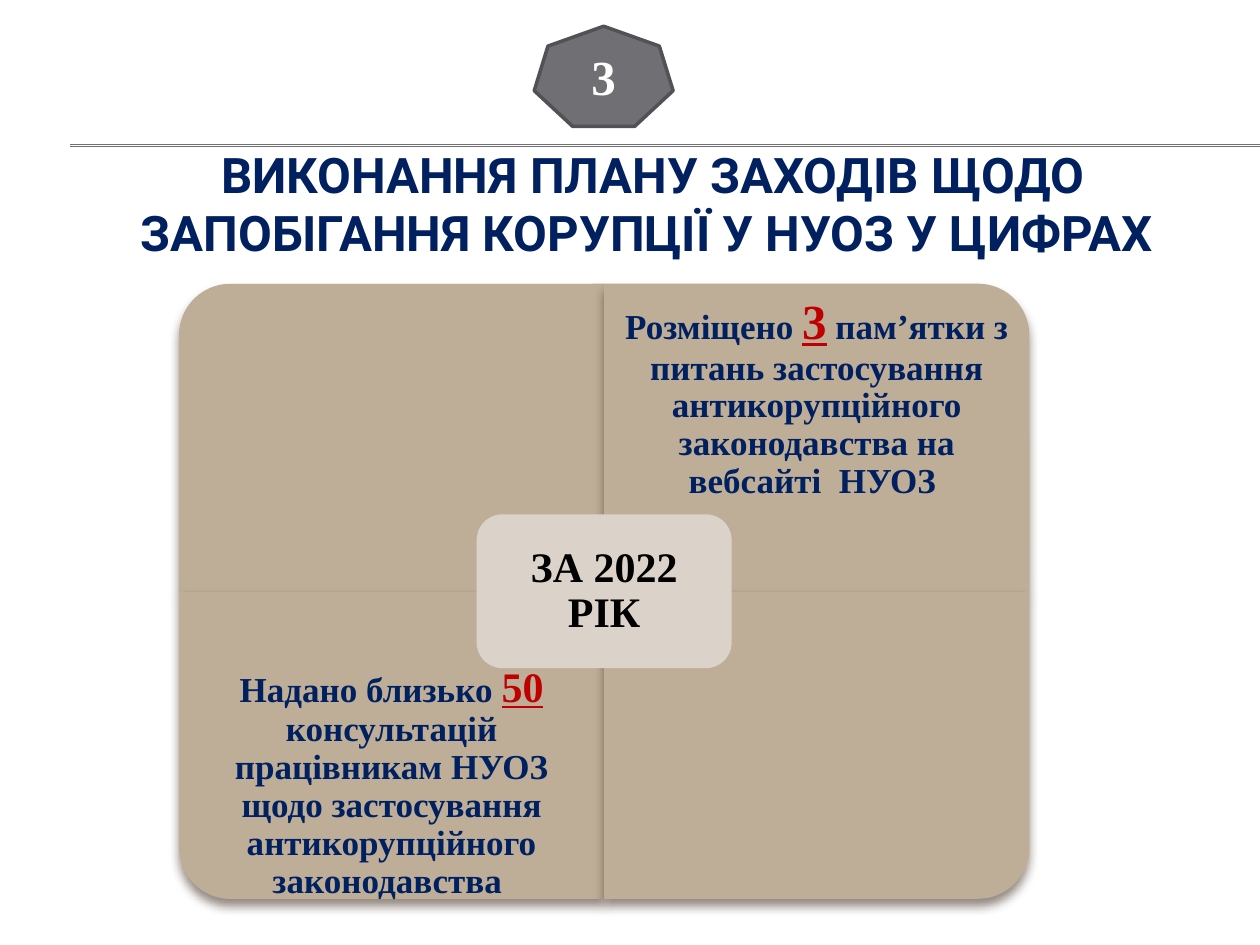
from lxml import etree
from pptx import Presentation
from pptx import util as u
from pptx.dml.color import RGBColor
from pptx.enum import shapes, text
from pptx.oxml import ns, parse_xml

Cm, Pt = u.Cm, u.Pt
HUE = {"navy": "002060", "red": "C00000", "white": "FFFFFF", "black": "000000",
       "grey": "6F6F74", "edge": "525256", "sand": "BEAE98", "pale": "DBD3CA",
       "shade": "4E3B30"}
SERIF = "Times New Roman"
SHADOW = (f'<a:effectLst {ns.nsdecls("a")}>'
          '<a:outerShdw blurRad="76200" dist="50800" dir="5400000" rotWithShape="0">'
          f'<a:srgbClr val="{HUE["shade"]}"><a:alpha val="60000"/></a:srgbClr>'
          '</a:outerShdw></a:effectLst>')


def write(shape, runs, inset=0.25, lead=1.0, face=SERIF):
    """Fill a shape with one centred bold paragraph of (words, size, hue, underline)."""
    frame = shape.text_frame
    form = {"word_wrap": True, "auto_size": text.MSO_AUTO_SIZE.NONE,
            "vertical_anchor": text.MSO_ANCHOR.MIDDLE}
    for side in ("left", "right", "top", "bottom"):
        form["margin_" + side] = Cm(inset)
    for key, val in form.items():
        setattr(frame, key, val)
    para = frame.paragraphs[0]
    para.alignment = text.PP_ALIGN.CENTER
    para.line_spacing = lead
    for words, size, hue, under in runs:
        run = para.add_run()
        run.text = words
        look = {"name": face, "size": Pt(size), "bold": True, "underline": under}
        for key, val in look.items():
            setattr(run.font, key, val)
        run.font.color.rgb = RGBColor.from_string(HUE[hue])


def block(kind, x, y, wide, high, hue):
    """Add a preset shape with a plain fill, no line and no shadow."""
    shape = slide.shapes.add_shape(kind, Cm(x), Cm(y), Cm(wide), Cm(high))
    shape.shadow.inherit = False
    shape.fill.solid()
    shape.fill.fore_color.rgb = RGBColor.from_string(HUE[hue])
    shape.line.fill.background()
    return shape


deck = Presentation()
deck.slide_width, deck.slide_height = Cm(25.4), Cm(19.05)
slide = deck.slides.add_slide(deck.slide_layouts[5])
KIND = shapes.MSO_SHAPE

# Title and the double rule above it
title = slide.shapes.title
place = {"left": 1.09, "top": 2.92, "width": 24.13, "height": 2.34}
for key, val in place.items():
    setattr(title, key, Cm(val))
write(title, [("ВИКОНАННЯ ПЛАНУ ЗАХОДІВ ЩОДО ЗАПОБІГАННЯ КОРУПЦІЇ У НУОЗ У ЦИФРАХ ",
               28, "navy", False)], face="Roboto")

for y in (2.92, 2.95):
    rule = slide.shapes.add_connector(
        shapes.MSO_CONNECTOR.STRAIGHT, Cm(1.42), Cm(y), Cm(25.4), Cm(y))
    rule.line.width = Pt(0.75)
    rule.line.color.rgb = RGBColor.from_string(HUE["grey"])
    etree.SubElement(rule._element.spPr, ns.qn("a:effectLst"))

# Numbered badge
badge = block(KIND.HEPTAGON, 10.77, 0.53, 2.8, 2.02, "grey")
badge.line.width = Pt(2)
badge.line.color.rgb = RGBColor.from_string(HUE["edge"])
write(badge, [("3", 28, "white", False)])

# Four quarters around a midpoint, each turned so its round corner faces out
mid_x, mid_y = 12.18, 11.92
wide, high, deep = 8.57, 6.2, 4.65
quads = [
    (-1, -1, 270, []),
    (1, -1, 0, [("Розміщено ", 20, "navy", False), ("3", 28, "red", True),
                (" пам’ятки з питань застосування антикорупційного "
                 "законодавства на вебсайті  НУОЗ ", 20, "navy", False)]),
    (-1, 1, 180, [("Надано близько ", 20, "navy", False), ("50", 24, "red", True),
                  (" консультацій працівникам НУОЗ щодо застосування "
                   "антикорупційного законодавства ", 20, "navy", False)]),
    (1, 1, 90, []),
]
for col, row, turn, runs in quads:
    w, h = (high, wide) if turn % 180 else (wide, high)
    x, y = mid_x + col * wide / 2, mid_y + row * high / 2
    quad = block(KIND.ROUND_1_RECTANGLE, x - w / 2, y - h / 2, w, h, "sand")
    quad.rotation = turn
    props = quad._element.spPr
    props.replace(props.find(ns.qn("a:effectLst")), parse_xml(SHADOW))
    if runs:
        top = y - high / 2 if row < 0 else y + high / 2 - deep
        box = slide.shapes.add_textbox(Cm(x - wide / 2), Cm(top), Cm(wide), Cm(deep))
        write(box, runs, 0.4, 0.9)

# Year label over the midpoint
w, h = 5.14, 3.1
year = block(KIND.ROUNDED_RECTANGLE, mid_x - w / 2, mid_y - h / 2, w, h, "pale")
write(year, [("ЗА 2022 РІК", 24, "black", False)], 0.4, 0.9)

deck.save("out.pptx")
